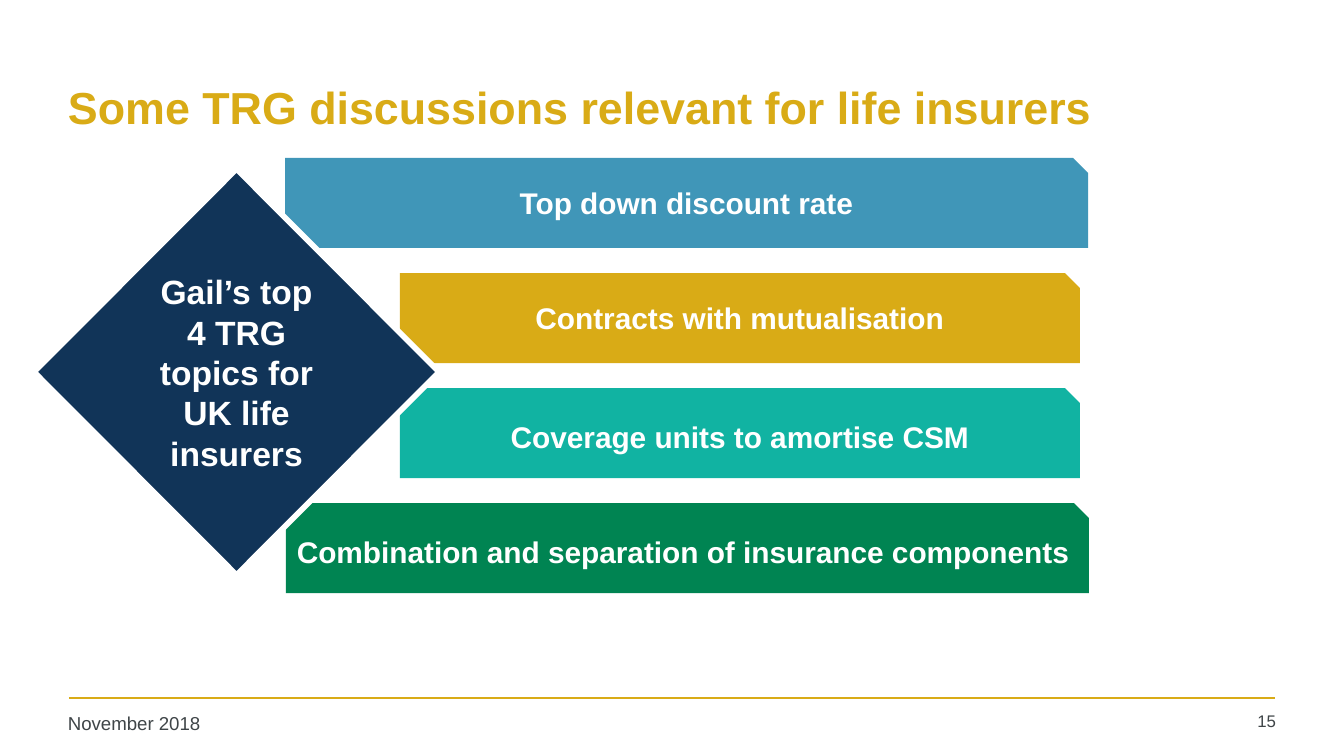
from lxml import etree
from pptx import Presentation
from pptx.dml.color import RGBColor
from pptx.enum.shapes import MSO_CONNECTOR, MSO_SHAPE as SHAPE
from pptx.enum.text import MSO_ANCHOR as ANCHOR, PP_ALIGN as ALIGN
from pptx.oxml.ns import qn
from pptx.util import Pt

WHITE = RGBColor(0xFF, 0xFF, 0xFF)
GOLD = RGBColor(0xD9, 0xAB, 0x16)
BLUE = RGBColor(0x40, 0x96, 0xB8)
TEAL = RGBColor(0x11, 0xB3, 0xA2)
GREEN = RGBColor(0x00, 0x84, 0x52)
NAVY = RGBColor(0x11, 0x34, 0x58)
GREY = RGBColor(0x3F, 0x45, 0x48)

EMU_PER_PX = 6804
WIDTH, HEIGHT = 1344, 756


def px(*values):
    return [value * EMU_PER_PX for value in values]


class Deck:
    font = "Arial"

    def __init__(self):
        self.prs = Presentation()
        self.prs.slide_width, self.prs.slide_height = px(WIDTH, HEIGHT)
        self.s = self.prs.slides.add_slide(self.prs.slide_layouts[6])

    def fill_text(self, sp, text, size, color, bold, align, anchor, insets):
        tf = sp.text_frame
        side, top = px(*insets)
        frame = {
            "word_wrap": True, "vertical_anchor": anchor,
            "margin_left": side, "margin_right": side,
            "margin_top": top, "margin_bottom": top,
        }
        for name, value in frame.items():
            setattr(tf, name, value)
        p = tf.paragraphs[0]
        p.alignment = align
        r = p.add_run()
        r.text = text
        style = {"name": self.font, "size": Pt(size), "bold": bold}
        for name, value in style.items():
            setattr(r.font, name, value)
        r.font.color.rgb = color

    def text(self, box, text, size, color, bold=False, align=ALIGN.LEFT, anchor=ANCHOR.TOP):
        sp = self.s.shapes.add_textbox(*px(*box))
        self.fill_text(sp, text, size, color, bold, align, anchor, (10, 5))

    def shape(self, kind, box, fill, text, size, insets, outline=None):
        sp = self.s.shapes.add_shape(kind, *px(*box))
        sp.shadow.inherit = False
        sp.fill.solid()
        sp.fill.fore_color.rgb = fill
        if outline is None:
            sp.line.fill.background()
        else:
            sp.line.color.rgb = outline
            sp.line.width = Pt(3)
        self.fill_text(sp, text, size, WHITE, True, ALIGN.CENTER, ANCHOR.MIDDLE, insets)

    def line(self, ends, color, width):
        c = self.s.shapes.add_connector(MSO_CONNECTOR.STRAIGHT, *px(*ends))
        c.line.color.rgb = color
        c.line.width = Pt(width)
        etree.SubElement(c._element.spPr, qn("a:effectLst"))


def main():
    deck = Deck()
    deck.line((69, 698, 1275, 698), GOLD, 1)
    deck.text((58, 44, 1219, 126), "Some TRG discussions relevant for life insurers",
              24, GOLD, bold=True, anchor=ANCHOR.MIDDLE)
    deck.text((1191, 706, 95, 37), "15", 9, GREY, align=ALIGN.RIGHT)

    bar_top, bar_step, bar_height = 158, 115, 90
    bars = [
        (SHAPE.SNIP_2_DIAG_RECTANGLE, 285, 803, BLUE, "Top down discount rate"),
        (SHAPE.SNIP_2_DIAG_RECTANGLE, 400, 680, GOLD, "Contracts with mutualisation"),
        (SHAPE.SNIP_2_SAME_RECTANGLE, 400, 680, TEAL, "Coverage units to amortise CSM"),
        (SHAPE.SNIP_2_SAME_RECTANGLE, 286, 803, GREEN,
         "Combination and separation of insurance components "),
    ]
    for i, (kind, left, width, fill, topic) in enumerate(bars):
        box = (left, bar_top + i * bar_step, width, bar_height)
        deck.shape(kind, box, fill, topic, 16, (0, 7))

    deck.text((58, 707, 296, 36), "November 2018", 10, GREY)
    deck.shape(SHAPE.DIAMOND, (34, 169, 405, 406), NAVY,
               "Gail’s top 4 TRG topics for UK life insurers", 18, (13, 7), WHITE)
    deck.prs.save("out.pptx")


if __name__ == "__main__":
    main()
